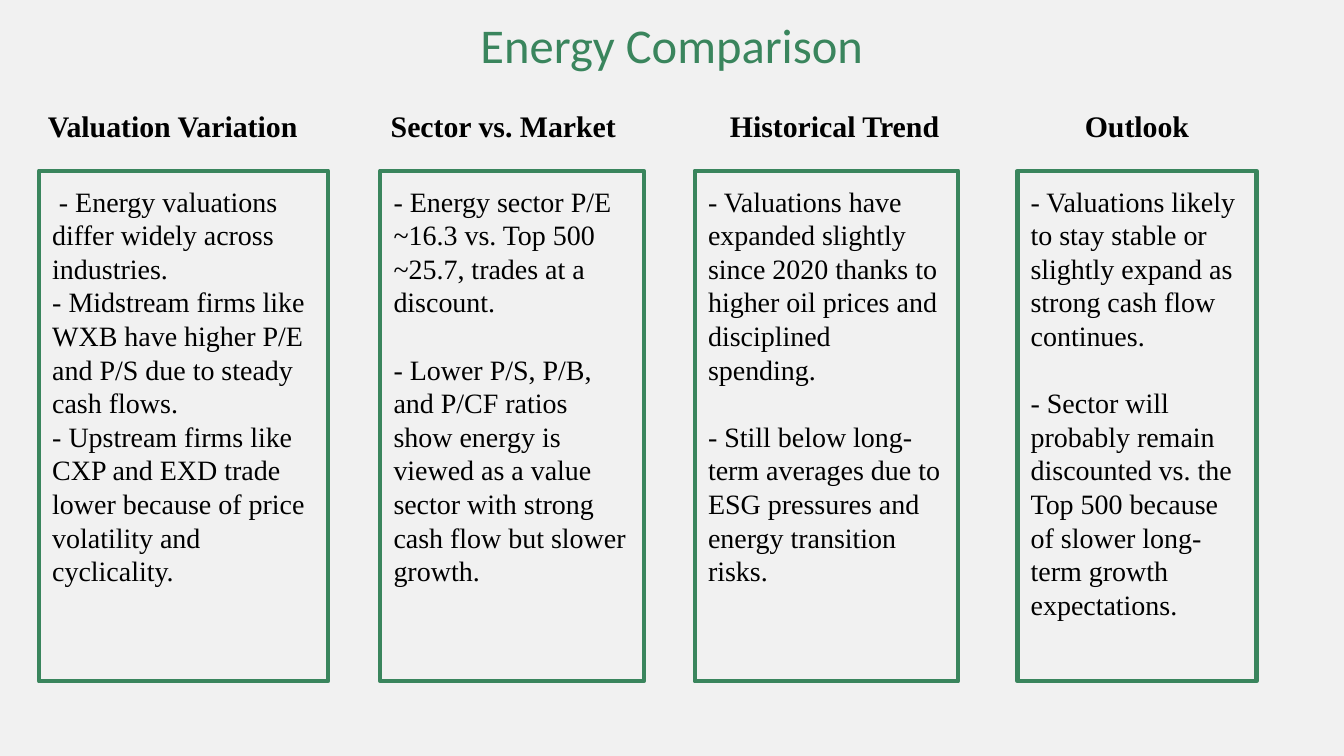
from pptx import Presentation
from pptx.dml.color import RGBColor
from pptx.enum.shapes import MSO_SHAPE
from pptx.enum.text import MSO_ANCHOR, PP_ALIGN
from pptx.util import Inches, Pt

RECTANGLE = MSO_SHAPE.RECTANGLE
TOP = MSO_ANCHOR.TOP
CENTER, LEFT = PP_ALIGN.CENTER, PP_ALIGN.LEFT
TITLE_ONLY = 5

GREEN, BLACK, BACKGROUND = "3A855D", "000000", "F1F1F1"
SERIF = "Times New Roman"
TITLE_FORMAT = {"name": "Calibri", "size": Pt(26), "bold": False, "color": GREEN}
HEADING_FORMAT = {"name": SERIF, "size": Pt(16), "bold": True, "color": BLACK}
BODY_FORMAT = {"name": SERIF, "size": Pt(15), "bold": False, "color": BLACK}

HEADING_TOP, HEADING_HEIGHT = 0.7, 0.31
PANEL_TOP, PANEL_HEIGHT = 1.27, 3.8

# Each column: heading, its left and width, panel left and width,
# gap between points, first-line indent of the first point, points
COLUMNS = [
    ("Valuation Variation", 0.21, 2.15, 0.29, 2.15, 0, 0.05, [
        "- Energy valuations differ widely across industries.",
        "- Midstream firms like WXB have higher P/E and P/S due to steady cash flows.",
        "- Upstream firms like CXP and EXD trade lower because of price volatility "
        "and cyclicality.",
    ]),
    ("Sector vs. Market", 2.72, 2.05, 2.83, 1.96, 18, 0, [
        "- Energy sector P/E ~16.3 vs. Top 500 ~25.7, trades at a discount.",
        "- Lower P/S, P/B, and P/CF ratios show energy is viewed as a value sector "
        "with strong cash flow but slower growth.",
    ]),
    ("Historical Trend", 5.32, 1.78, 5.17, 1.96, 18, 0, [
        "- Valuations have expanded slightly since 2020 thanks to higher oil prices "
        "and disciplined spending.",
        "- Still below long-term averages due to ESG pressures and energy "
        "transition risks.",
    ]),
    ("Outlook", 7.65, 1.62, 7.57, 1.78, 18, 0, [
        "- Valuations likely to stay stable or slightly expand as strong cash flow "
        "continues.",
        "- Sector will probably remain discounted vs. the Top 500 because of slower "
        "long-term growth expectations.",
    ]),
]


def color(hex_value):
    return RGBColor.from_string(hex_value)


def write(shape, lines, text_format, alignment, gap=0):
    """Fill a shape with one paragraph per line, spaced by gap points."""
    frame = shape.text_frame
    frame.word_wrap = True
    frame.vertical_anchor = TOP
    for side in ("left", "top", "right", "bottom"):
        setattr(frame, f"margin_{side}", Inches(0.1))
    for index, line in enumerate(lines):
        paragraph = frame.add_paragraph() if index else frame.paragraphs[0]
        paragraph.text = line
        paragraph.alignment = alignment
        paragraph.line_spacing = 1.0
        paragraph.space_before = Pt(gap if index else 0)
        for key, value in text_format.items():
            if key == "color":
                paragraph.font.color.rgb = color(value)
            else:
                setattr(paragraph.font, key, value)


def add_title(slide, text):
    title = slide.shapes.title
    title.left, title.top = Inches(1.22), Inches(0.01)
    title.width, title.height = Inches(7.56), Inches(0.62)
    write(title, [text], TITLE_FORMAT, CENTER)


def add_heading(slide, text, left, width):
    box = slide.shapes.add_textbox(
        Inches(left), Inches(HEADING_TOP), Inches(width), Inches(HEADING_HEIGHT))
    write(box, [text], HEADING_FORMAT, CENTER)


def add_panel(slide, points, left, width, gap, indent):
    panel = slide.shapes.add_shape(
        RECTANGLE, Inches(left), Inches(PANEL_TOP), Inches(width), Inches(PANEL_HEIGHT))
    panel.shadow.inherit = False
    panel.fill.background()
    panel.line.color.rgb = color(GREEN)
    panel.line.width = Pt(2.25)
    write(panel, points, BODY_FORMAT, LEFT, gap)
    if indent:
        properties = panel.text_frame.paragraphs[0]._p.get_or_add_pPr()
        properties.set("indent", str(Inches(indent)))


def main():
    presentation = Presentation()
    # Widescreen, 16:9
    presentation.slide_width = Inches(10)
    presentation.slide_height = Inches(10 * 9 / 16)
    slide = presentation.slides.add_slide(presentation.slide_layouts[TITLE_ONLY])
    slide.background.fill.solid()
    slide.background.fill.fore_color.rgb = color(BACKGROUND)

    add_title(slide, "Energy Comparison")
    for heading, head_left, head_width, left, width, gap, indent, points in COLUMNS:
        add_heading(slide, heading, head_left, head_width)
        add_panel(slide, points, left, width, gap, indent)

    presentation.save("out.pptx")


if __name__ == "__main__":
    main()
